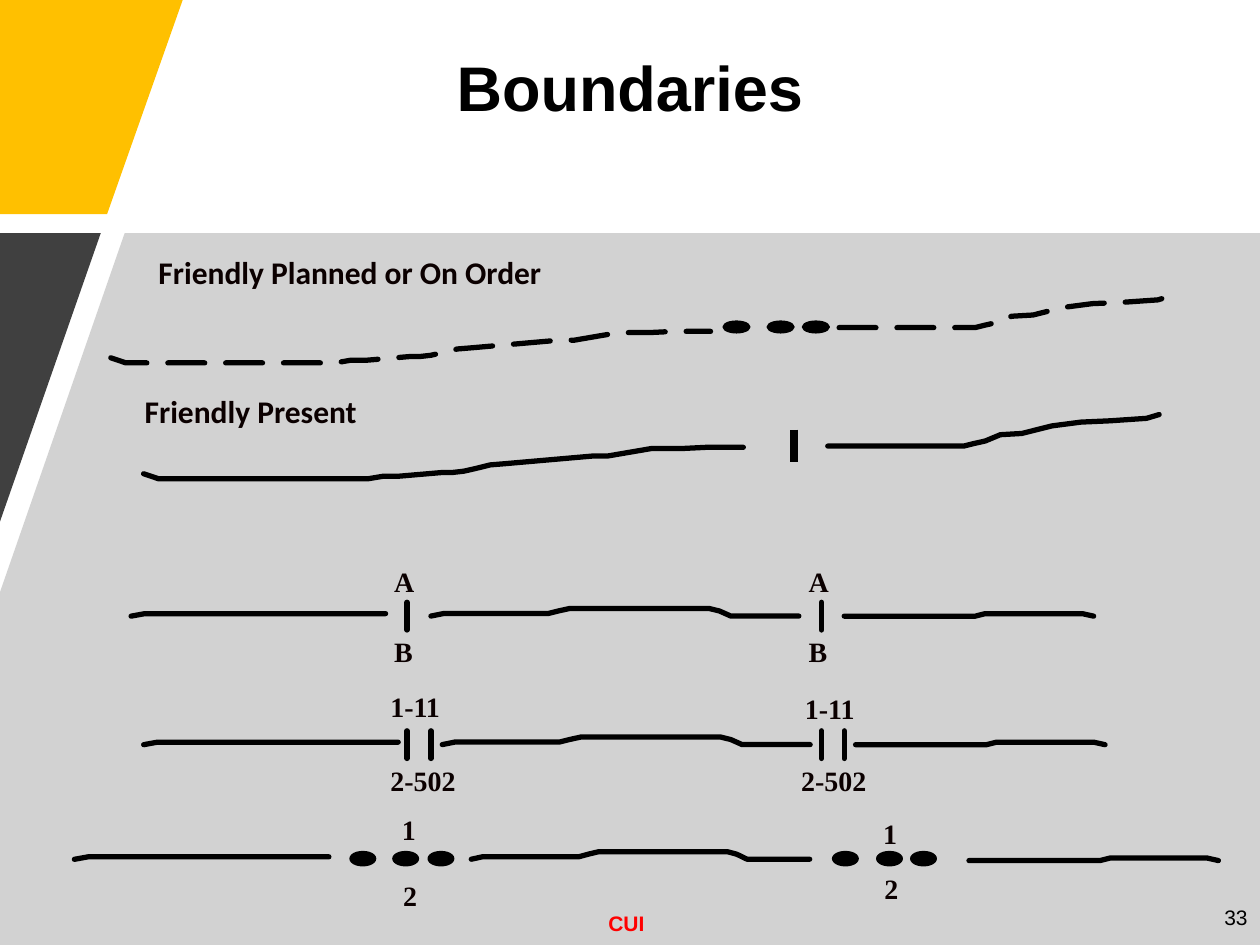
"""Build the slide on boundary lines between units."""
from lxml import etree
from pptx import Presentation, util as u
from pptx.dml.color import RGBColor
from pptx.enum import dml, shapes, text
from pptx.oxml.ns import qn

INK, BLACK = "0B0000", "000000"
PANELS = [
    ("FFC000", None, [(0, 0), (1.45, 0), (0.85, 1.7), (0, 1.7)]),
    ("A6A6A6", 50, [(0.99, 1.85), (10, 1.85), (10, 7.5), (0, 7.5), (0, 4.7)]),
    ("404040", None, [(0, 1.85), (0.8, 1.85), (0, 4.14)]),
]
CURVES = {
    "slope": [(0, 0.21), (0.12, 0.25), (1.78, 0.25), (1.9, 0.23),
              (2.02, 0.23), (2.37, 0.2), (2.45, 0.2), (2.54, 0.19),
              (2.63, 0.17), (2.75, 0.14), (2.87, 0.13), (3.56, 0.07),
              (3.68, 0.07), (4.03, 0.01), (4.27, 0.01), (4.47, 0), (4.76, 0)],
    "rise": [(0, 0.25), (1.08, 0.25), (1.16, 0.23), (1.25, 0.21),
             (1.37, 0.16), (1.54, 0.15), (1.78, 0.09), (2.01, 0.06),
             (2.24, 0.05), (2.53, 0.03), (2.63, 0)],
    "left": [(0, 0.02), (0.11, 0), (2.02, 0)],
    "mid": [(0, 0.06), (0.1, 0.04), (0.93, 0.04), (1.01, 0.02), (1.1, 0),
            (2.21, 0), (2.29, 0.02), (2.38, 0.06), (2.92, 0.06)],
    "right": [(0, 0.02), (1.04, 0.02), (1.12, 0), (1.89, 0), (1.98, 0.02)],
}
LINES = [
    ("slope", 0.88, 2.63, 1, True), ("rise", 6.66, 2.35, 1, True),
    ("slope", 1.14, 3.55, 1, False), ("rise", 6.57, 3.29, 1, False),
    ("left", 1.04, 4.87, 1, False), ("mid", 3.42, 4.83, 1, False),
    ("right", 6.7, 4.87, 1, False),
    ("left", 1.14, 5.89, 1, False), ("mid", 3.51, 5.85, 1, False),
    ("right", 6.79, 5.89, 1, False),
    ("left", 0.59, 6.8, 1, False), ("mid", 3.74, 6.76, 0.92, False),
    ("right", 7.69, 6.81, 1, False),
]
DOTS = [(2.55, 0.21, 0.09, [5.74, 6.09, 6.37]),
        (6.76, 0.2, 0.11, [2.78, 3.12, 3.4, 6.61, 6.96, 7.23])]
TICKS = [(3.41, 0.26, 4.5, [6.3]), (4.78, 0.22, 3, [3.23, 6.52]),
         (5.8, 0.22, 3, [3.23, 3.42, 6.52, 6.7])]
LABELS = [
    ("A", 0.65, [(3.03, 4.43), (6.32, 4.43)]),
    ("B", 0.63, [(3.03, 4.99), (6.32, 4.99)]),
    ("1-11", 1.07, [(3, 5.42), (6.29, 5.44)]),
    ("2-502", 1.3, [(3, 6.01), (6.26, 6.01)]),
    ("1", 0.58, [(3.09, 6.4), (6.91, 6.43)]),
    ("2", 0.65, [(3.1, 6.92), (6.92, 6.87)]),
]

deck = Presentation()


def cm(*vals):
    return [u.Cm(2.54 * v) for v in vals]


deck.slide_width, deck.slide_height = cm(10, 7.5)
page = deck.slides.add_slide(deck.slide_layouts[6]).shapes


def hue(code):
    return RGBColor.from_string(code)


def paint(shape, code):
    shape.fill.solid()
    shape.fill.fore_color.rgb = hue(code)


def trace(points, close):
    start, *rest = [cm(*p) for p in points]
    form = page.build_freeform(*start, scale=1.0)
    form.add_line_segments(rest, close=close)
    shape = form.convert_to_shape()
    shape.shadow.inherit = False
    return shape


def stroke(shape, width, dash=False, cap="rnd"):
    shape.line.color.rgb = hue(BLACK)
    shape.line.width = u.Pt(width)
    if dash:
        shape.line.dash_style = dml.MSO_LINE.LONG_DASH
    edge = shape.element.spPr.find(qn("a:ln"))
    edge.set("cap", cap)
    if cap == "rnd":
        etree.SubElement(edge, qn("a:round"))


def write(words, box, size, font, code=INK, bold=True, side="LEFT",
          mid=False, wrap=True, gap=None):
    frame = page.add_textbox(*cm(*box)).text_frame
    frame.text = words
    frame.word_wrap = wrap
    if mid:
        frame.vertical_anchor = text.MSO_ANCHOR.MIDDLE
    para = frame.paragraphs[0]
    para.alignment = text.PP_ALIGN[side]
    if gap:
        para.line_spacing = gap
    face = para.runs[0].font
    face.name, face.size, face.bold = font, u.Pt(size), bold
    face.color.rgb = hue(code)


for code, alpha, points in PANELS:
    panel = trace(points, True)
    paint(panel, code)
    panel.line.fill.background()
    if alpha:
        tint = panel.element.spPr.find(".//" + qn("a:srgbClr"))
        etree.SubElement(tint, qn("a:alpha"), val=str(alpha * 1000))

write("CUI", (4.73, 7.18, 0.49, 0.3), 12, "Arial", "FF0000", wrap=False)
write("33", (7.75, 7.08, 2.25, 0.4), 12, "Arial", BLACK, False, "RIGHT", True)
write("Boundaries", (0, 0.38, 10, 0.68), 36, "Arial", BLACK, side="CENTER",
      mid=True, gap=0.9)
write("Friendly Planned or On Order", (1.16, 1.96, 7.14, 0.31), 18, "Calibri")
write("Friendly Present", (1.05, 3.06, 4.16, 0.31), 18, "Calibri")

for name, left, top, scale, dash in LINES:
    curve = trace([(left + x * scale, top + y) for x, y in CURVES[name]], False)
    curve.fill.background()
    stroke(curve, 3, dash)

for top, wide, high, lefts in DOTS:
    for left in lefts:
        dot = page.add_shape(shapes.MSO_SHAPE.OVAL, *cm(left, top, wide, high))
        dot.shadow.inherit = False
        paint(dot, BLACK)
        stroke(dot, 1, cap="flat")

for top, high, width, lefts in TICKS:
    for x in lefts:
        tick = page.add_connector(shapes.MSO_CONNECTOR.STRAIGHT,
                                  *cm(x, top, x, top + high))
        stroke(tick, width, cap="rnd" if width == 3 else "flat")
        etree.SubElement(tick.element.spPr, qn("a:effectLst"))

for words, wide, spots in LABELS:
    for left, top in spots:
        write(words, (left, top, wide, 0.43), 16, "Times New Roman")

deck.save("out.pptx")
